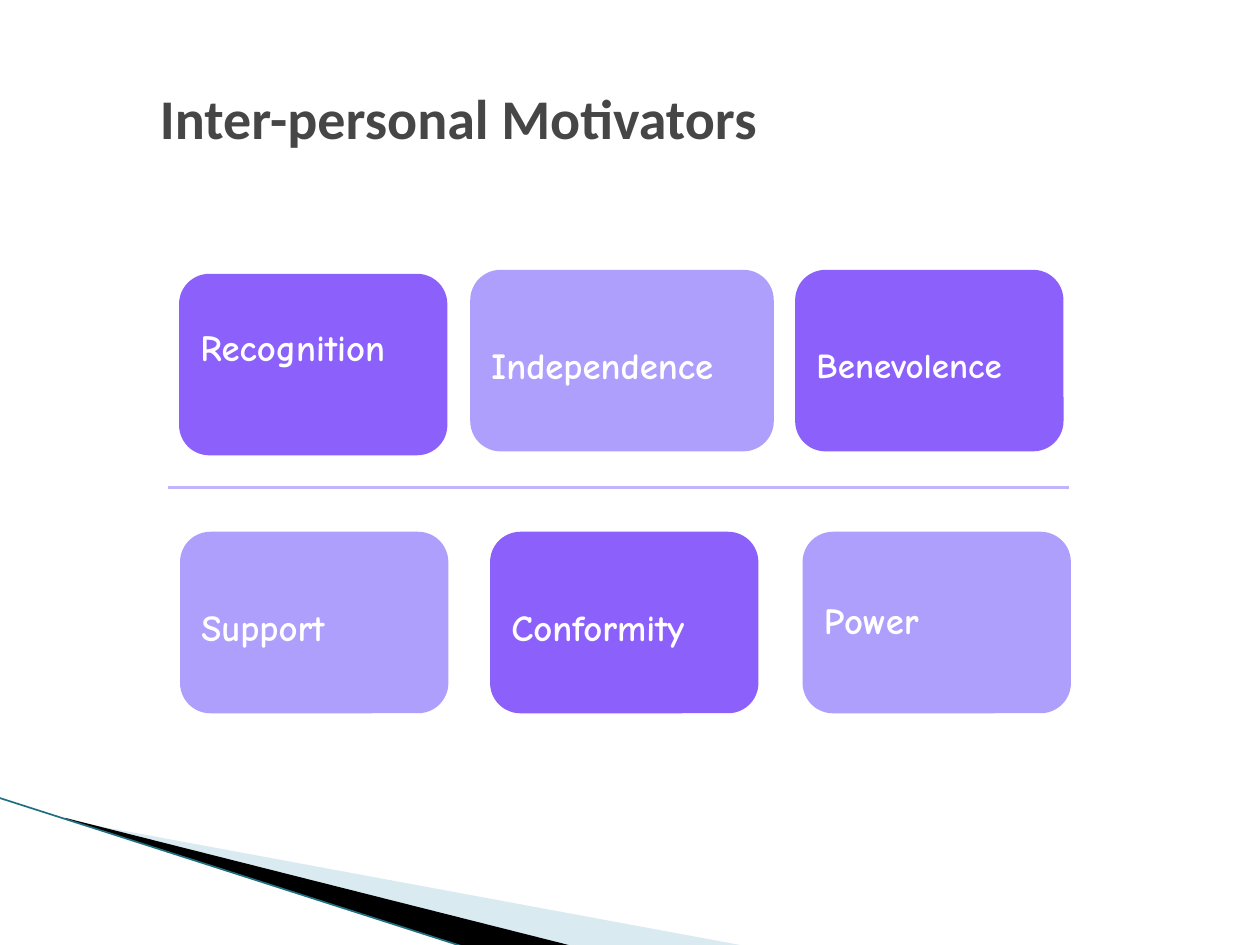
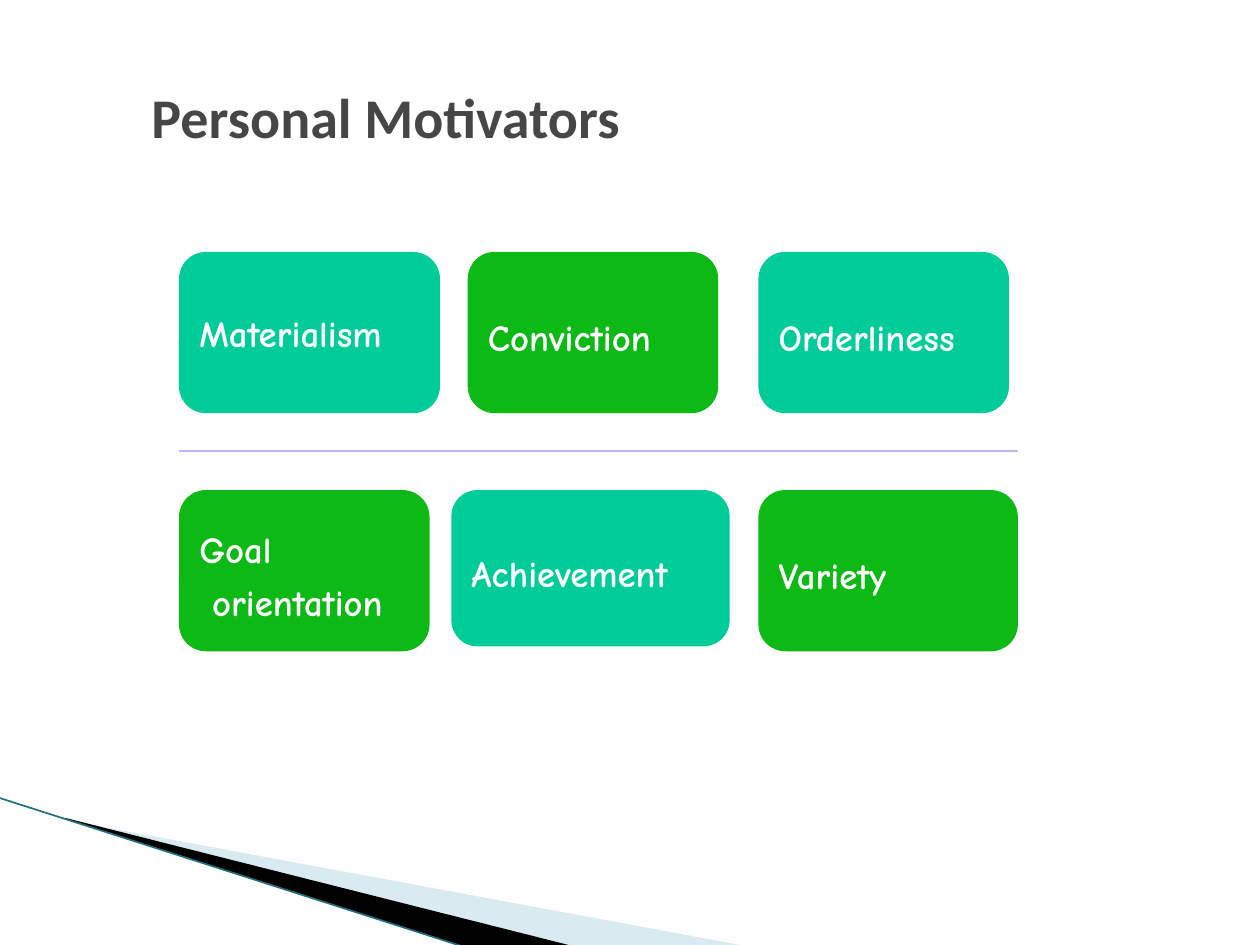
from dataclasses import dataclass

from lxml.etree import SubElement as Sub
from pptx import Presentation as Deck
from pptx.dml.color import RGBColor as Rgb
from pptx.enum.shapes import MSO_CONNECTOR as Link, MSO_SHAPE as Form
from pptx.enum.text import MSO_ANCHOR as Anchor, MSO_AUTO_SIZE as Fit, PP_ALIGN as Align
from pptx.oxml.ns import qn
from pptx.util import Cm, Pt


@dataclass(frozen=True)
class Theme:
    head: str = "Calibri"
    body: str = "Comic Neue"
    title: float = 32
    label: float = 21
    small: float = 20
    ink: str = "464646"
    white: str = "FFFFFF"
    black: str = "000000"
    mist: str = "A0CBDC"
    edge: str = "1F6F80"
    rule: str = "C0B4FE"
    purple: tuple = ("8C60FA", "AF9FFD")
    green: tuple = ("00CC99", "0DB915")


theme = Theme()


@dataclass(frozen=True)
class Card:
    text: str
    left: float
    width: float
    drop: float = 0
    trim: float = 0
    lift: float = 0
    pitch: float = 1.2
    size: float = theme.label


@dataclass(frozen=True)
class Grid:
    box: tuple
    rule: float
    step: float
    tall: float
    hues: tuple
    rows: tuple


def paint(shape, hue):
    shape.shadow.inherit = False
    shape.fill.solid()
    shape.fill.fore_color.rgb = Rgb.from_string(hue)
    shape.line.fill.background()


def style(para, face, size, hue):
    para.alignment = Align.LEFT
    for run in para.runs:
        font = run.font
        font.name, font.size, font.bold = face, Pt(size), True
        font.color.rgb = Rgb.from_string(hue)


def draw_line(slide, start, end, hue, width):
    line = slide.shapes.add_connector(Link.STRAIGHT, *map(Cm, start + end))
    line.line.color.rgb = Rgb.from_string(hue)
    line.line.width = Pt(width)
    Sub(line._element.spPr, qn("a:effectLst"))


def draw_wedge(slide, box, points, hue, alpha=None):
    left, top = box
    spots = [(Cm(left + x), Cm(top + y)) for x, y in points]
    pen = slide.shapes.build_freeform(*spots[0])
    pen.add_line_segments(spots[1:], close=True)
    wedge = pen.convert_to_shape()
    paint(wedge, hue)
    if alpha:
        tone = wedge._element.spPr.find(".//" + qn("a:srgbClr"))
        Sub(tone, qn("a:alpha"), val=str(alpha * 1000))


def draw_base(slide, box):
    left, top = box
    draw_wedge(slide, box, [(1.4, 0.46), (15.11, 3), (11.58, 3), (1.4, 0.43)], theme.mist, 40)
    draw_wedge(slide, box, [(1.35, 0.41), (11.61, 3), (9.45, 3.02), (1.37, 0.43)], theme.black)
    draw_line(slide, (left, top), (left + 9.42, top + 3.02), theme.edge, 0.95)


def draw_title(slide, box, text):
    title = slide.shapes.title
    title.left, title.top, title.width, title.height = map(Cm, box)
    frame = title.text_frame
    frame.text = text
    frame.word_wrap = True
    frame.auto_size = Fit.NONE
    frame.vertical_anchor = Anchor.MIDDLE
    style(frame.paragraphs[0], theme.head, theme.title, theme.ink)


def draw_card(slide, box, card, hue):
    shape = slide.shapes.add_shape(Form.ROUNDED_RECTANGLE, *map(Cm, box))
    paint(shape, hue)
    frame = shape.text_frame
    frame.text = card.text
    frame.word_wrap = True
    frame.vertical_anchor = Anchor.MIDDLE
    frame.margin_bottom = Cm(0.13 + card.lift)
    for row, para in enumerate(frame.paragraphs):
        para.line_spacing = card.pitch
        style(para, theme.body, card.size, theme.white)
        if row:
            para._p.get_or_add_pPr().set("marL", str(Cm(0.26)))


def draw_grid(slide, grid):
    left, top, width = grid.box
    level = top + grid.rule
    draw_line(slide, (left, level), (left + width, level), theme.rule, 1.5)
    for row, cards in enumerate(grid.rows):
        for col, card in enumerate(cards):
            box = (left + card.left, top + row * grid.step + card.drop,
                   card.width, grid.tall - card.trim)
            draw_card(slide, box, card, grid.hues[(row + col) % 2])


def add_page(deck, text, box, grid):
    slide = deck.slides.add_slide(deck.slide_layouts[5])
    draw_base(slide, (-0.03, 16.08))
    draw_title(slide, box, text)
    draw_grid(slide, grid)


def main():
    deck = Deck()
    deck.slide_width, deck.slide_height = Cm(25.4), Cm(19.05)
    social = Grid((3.38, 5.44, 18.16), 4.39, 5.28, 3.66, theme.purple, (
        (Card("Recognition", 0.23, 5.41, drop=0.08, lift=0.9),
         Card("Independence", 6.1, 6.12),
         Card("Benevolence", 12.65, 5.41, size=theme.small)),
        (Card("Support", 0.25, 5.41),
         Card("Conformity", 6.5, 5.41),
         Card("Power", 12.8, 5.41, pitch=0.9)),
    ))
    inner = Grid((3.61, 5.08, 16.92), 4.01, 4.8, 3.25, theme.green, (
        (Card("Materialism", 0, 5.26, pitch=1),
         Card("Conviction", 5.82, 5.05),
         Card("Orderliness", 11.68, 5.05)),
        (Card("Goal\norientation", 0, 5.05),
         Card("Achievement", 5.49, 5.61, trim=0.1),
         Card("Variety", 11.68, 5.23)),
    ))
    add_page(deck, "Inter-personal Motivators", (2.97, 1.55, 18.85, 1.63), social)
    add_page(deck, "Personal Motivators", (2.8, 0.76, 21.33, 3.18), inner)
    deck.save("out.pptx")


if __name__ == "__main__":
    main()
